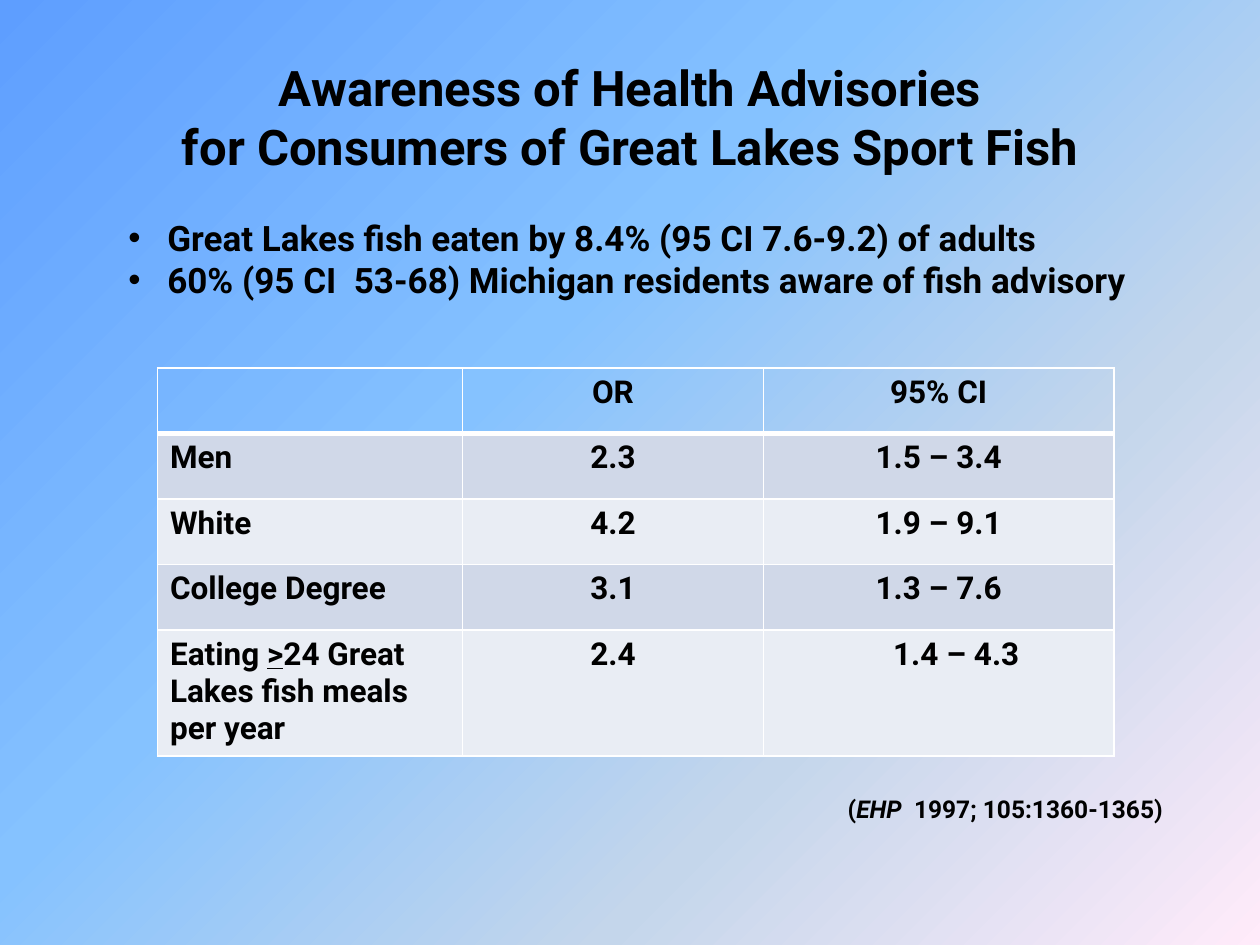
from lxml import etree
from pptx import Presentation
from pptx.dml.color import RGBColor
from pptx.enum.text import MSO_ANCHOR, PP_ALIGN
from pptx.oxml.ns import qn
from pptx.util import Inches, Pt

LEFT, CENTER, RIGHT = PP_ALIGN.LEFT, PP_ALIGN.CENTER, PP_ALIGN.RIGHT
MIDDLE, TOP = MSO_ANCHOR.MIDDLE, MSO_ANCHOR.TOP
COLORS = {"text": "000000", "border": "FFFFFF", "odd": "D0D8E8", "even": "E9EDF4"}
GRADIENT = {0: "5E9EFF", 40: "85C2FF", 70: "C4D6EB", 100: "FFEBFA"}


def write_paragraph(paragraph, pieces, size, alignment):
    paragraph.alignment = alignment
    for text, extra in pieces:
        run = paragraph.add_run()
        run.text = text
        font_format = {"name": "Roboto", "size": Pt(size), "bold": True, **extra}
        for name, value in font_format.items():
            setattr(run.font, name, value)
        run.font.color.rgb = RGBColor.from_string(COLORS["text"])


def add_text(left, top, width, height, paragraphs, size, alignment, anchor):
    box = slide.shapes.add_textbox(Inches(left), Inches(top), Inches(width), Inches(height))
    frame = box.text_frame
    frame.word_wrap = True
    frame.vertical_anchor = anchor
    for index, pieces in enumerate(paragraphs):
        paragraph = frame.add_paragraph() if index else frame.paragraphs[0]
        write_paragraph(paragraph, pieces, size, alignment)
    return frame


presentation = Presentation()
presentation.slide_width = Inches(10)
presentation.slide_height = Inches(7.5)
slide = presentation.slides.add_slide(presentation.slide_layouts[6])

background = slide.background.fill
background.gradient()
background.gradient_angle = 315
stops = slide.element.find(".//" + qn("a:gsLst"))
for stop in list(stops):
    stops.remove(stop)
for position, color in GRADIENT.items():
    stop = etree.SubElement(stops, qn("a:gs"), pos=str(position * 1000))
    etree.SubElement(stop, qn("a:srgbClr"), val=color)

title = [
    [("Awareness of Health Advisories", {})],
    [("for Consumers of Great Lakes Sport Fish", {})],
]
add_text(0.5, 0.3, 9, 1.25, title, 28, CENTER, MIDDLE)

rows = [
    ["", "OR", "95% CI"],
    ["Men", "2.3", "1.5 – 3.4"],
    ["White", "4.2", "1.9 – 9.1"],
    ["College Degree", "3.1", "1.3 – 7.6"],
    ["Eating >24 Great Lakes fish meals per year", "2.4", "1.4 – 4.3"],
]
column_widths = [2.42, 2.39, 2.78]
row_heights = [0.52, 0.52, 0.52, 0.52, 0.98]
table = slide.shapes.add_table(
    len(rows), len(column_widths), Inches(1.25), Inches(2.92),
    Inches(sum(column_widths)), Inches(sum(row_heights)),
).table
for column, width in zip(table.columns, column_widths):
    column.width = Inches(width)
for row, height in zip(table.rows, row_heights):
    row.height = Inches(height)

for row_index, values in enumerate(rows):
    for column_index, value in enumerate(values):
        cell = table.cell(row_index, column_index)
        if row_index:
            cell.fill.solid()
            band = "odd" if row_index % 2 else "even"
            cell.fill.fore_color.rgb = RGBColor.from_string(COLORS[band])
        else:
            cell.fill.background()
        before, sign, after = value.partition(">")
        pieces = [(before, {}), (sign, {"underline": True}), (after, {})]
        write_paragraph(
            cell.text_frame.paragraphs[0], [piece for piece in pieces if piece[0]],
            18, CENTER if column_index else LEFT,
        )
        properties = cell._tc.get_or_add_tcPr()
        for order, side in enumerate(["L", "R", "T", "B"]):
            thick = (row_index, side) in [(0, "B"), (1, "T")]
            line = etree.Element(qn("a:ln" + side), w=str(Pt(3 if thick else 1)))
            fill = etree.SubElement(line, qn("a:solidFill"))
            etree.SubElement(fill, qn("a:srgbClr"), val=COLORS["border"])
            properties.insert(order, line)
table.cell(4, 2).margin_left = Inches(0.38)

citation = [[("(", {}), ("EHP  ", {"italic": True}), ("1997; 105:1360-1365)", {})]]
add_text(3.17, 6.25, 6.16, 0.34, citation, 14, RIGHT, TOP)

findings = [
    [("Great Lakes fish eaten by 8.4% (95 CI 7.6-9.2) of adults", {})],
    [("60% (95 CI  53-68) Michigan residents aware of fish advisory", {})],
]
findings_frame = add_text(0.92, 1.67, 9, 0.77, findings, 20, LEFT, TOP)
for paragraph in findings_frame.paragraphs:
    properties = paragraph._p.get_or_add_pPr()
    properties.set("marL", str(Inches(0.31)))
    properties.set("indent", str(-Inches(0.31)))
    etree.SubElement(properties, qn("a:buFont"), typeface="Arial")
    etree.SubElement(properties, qn("a:buChar"), char="•")

presentation.save("out.pptx")
